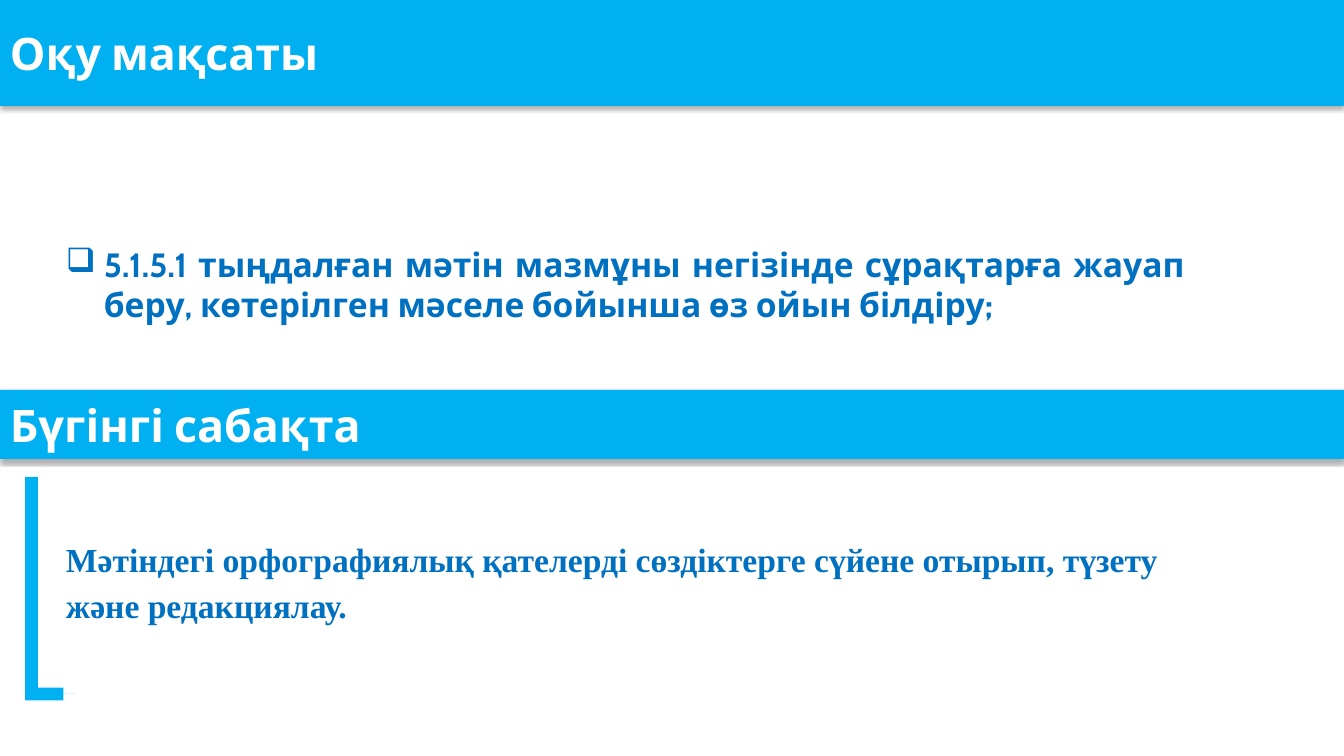
from lxml.etree import SubElement
from pptx import Presentation
from pptx.dml.color import RGBColor
from pptx.enum.shapes import MSO_SHAPE
from pptx.enum.text import MSO_ANCHOR, PP_ALIGN
from pptx.oxml.ns import qn
from pptx.util import Emu, Pt

# Content: text with its box as left, top, width, height in px
HEADINGS = [
    ("Оқу мақсаты", (0, 0, 1344, 106)),
    ("Бүгінгі сабақта", (0, 390, 1344, 69)),
]
GOAL = ("5.1.5.1 тыңдалған мәтін мазмұны негізінде сұрақтарға жауап беру, "
        "көтерілген мәселе бойынша өз ойын білдіру;", (56, 239, 1139, 132))
TASK = ("Мәтіндегі орфографиялық қателерді сөздіктерге сүйене отырып, түзету "
        "және редакциялау.", (56, 528, 1132, 104))
CORNER_BOX = (-58, 560, 217, 51)
BULLET, BULLET_INDENT = "❑", 38

THEME = {
    "bar": RGBColor.from_string("00B0F0"),
    "heading": {"name": "Cabin", "size": Pt(32), "color": "FFFFFF"},
    "goal": {"name": "Cabin", "size": Pt(24), "color": "0070C0"},
    "task": {"name": "Times New Roman", "size": Pt(24), "color": "0070C0"},
}
PX = 914400 / 100.8


def px(length):
    return Emu(round(length * PX))


def write(frame, text, style, **paragraph_format):
    frame.word_wrap = True
    paragraph = frame.paragraphs[0]
    for name, value in {"alignment": PP_ALIGN.LEFT, **paragraph_format}.items():
        setattr(paragraph, name, value)
    run = paragraph.add_run()
    run.text = text
    font_format = {"name": style["name"], "size": style["size"], "bold": True}
    for name, value in font_format.items():
        setattr(run.font, name, value)
    run.font.color.rgb = RGBColor.from_string(style["color"])
    return paragraph


def add_blue_shape(slide, kind, box):
    shape = slide.shapes.add_shape(kind, *map(px, box))
    shape.shadow.inherit = False
    shape.fill.solid()
    shape.fill.fore_color.rgb = THEME["bar"]
    shape.line.fill.background()
    return shape


def add_drop_shadow(shape):
    effects = shape.element.spPr.find(qn("a:effectLst"))
    shadow = SubElement(effects, qn("a:outerShdw"), blurRad=str(Pt(3.5)),
                        dist=str(Pt(2.2)), dir="5400000", rotWithShape="0")
    color = SubElement(shadow, qn("a:srgbClr"), val="000000")
    SubElement(color, qn("a:alpha"), val="32000")


def add_bullet(paragraph):
    properties = paragraph._p.get_or_add_pPr()
    properties.set("marL", str(px(BULLET_INDENT)))
    properties.set("indent", str(-px(BULLET_INDENT)))
    SubElement(properties, qn("a:buChar"), char=BULLET)


def add_text(slide, content, style, **paragraph_format):
    text, box = content
    frame = slide.shapes.add_textbox(*map(px, box)).text_frame
    return write(frame, text, style, **paragraph_format)


def main():
    deck = Presentation()
    deck.slide_width, deck.slide_height = px(1344), px(756)
    slide = deck.slides.add_slide(deck.slide_layouts[6])

    for heading, box in HEADINGS:
        bar = add_blue_shape(slide, MSO_SHAPE.RECTANGLE, box)
        add_drop_shadow(bar)
        bar.text_frame.vertical_anchor = MSO_ANCHOR.MIDDLE
        write(bar.text_frame, heading, THEME["heading"])

    add_bullet(add_text(slide, GOAL, THEME["goal"], alignment=PP_ALIGN.JUSTIFY))
    add_text(slide, TASK, THEME["task"], line_spacing=1.15, space_after=Pt(10))

    corner = add_blue_shape(slide, MSO_SHAPE.BENT_UP_ARROW, CORNER_BOX)
    corner.rotation = 90
    for index, ratio in enumerate((0.25, 0, 0.25)):
        corner.adjustments[index] = ratio

    deck.save("out.pptx")


if __name__ == "__main__":
    main()
